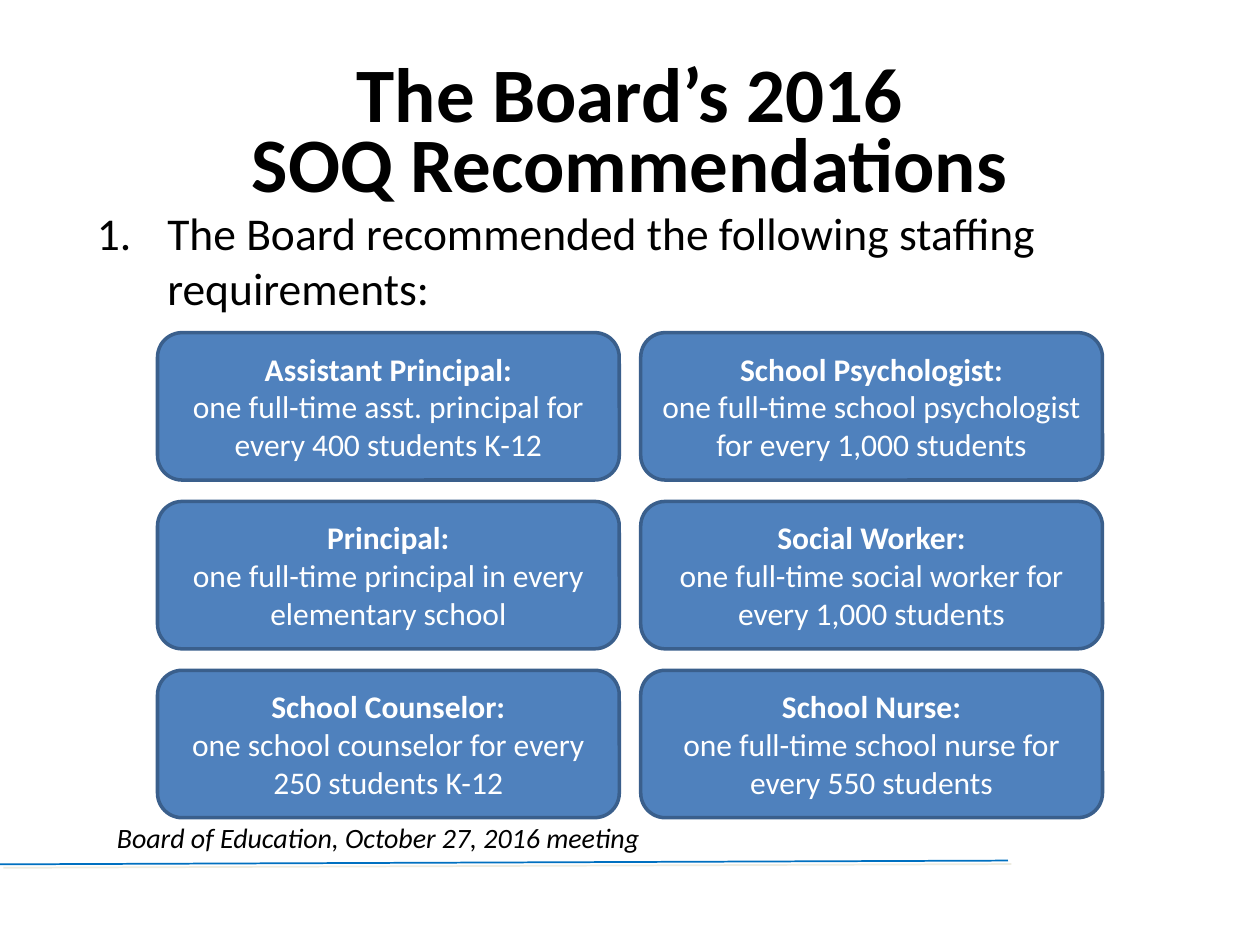
from dataclasses import dataclass

from lxml import etree
from pptx import Presentation
from pptx.dml.color import RGBColor
from pptx.enum import shapes, text
from pptx.oxml import ns
from pptx.util import Inches, Pt


@dataclass(frozen=True)
class Theme:
    font: str = "Calibri"
    ink: str = "000000"
    card_text: str = "FFFFFF"
    card_fill: str = "4F81BD"
    card_line: str = "3A5F8C"
    rule: str = "0070C0"
    rule_shadow: str = "EEECE1"
    title_size: int = 44
    intro_size: int = 26
    card_size: int = 18
    source_size: int = 16


THEME = Theme()

# Each column of cards, from top to bottom
STAFFING = [
    [
        ("Assistant Principal:", "one full-time asst. principal for every 400 students K-12"),
        ("Principal:", "one full-time principal in every elementary school"),
        ("School Counselor:", "one school counselor for every 250 students K-12"),
    ],
    [
        ("School Psychologist:", "one full-time school psychologist for every 1,000 students"),
        ("Social Worker:", "one full-time social worker for every 1,000 students"),
        ("School Nurse:", "one full-time school nurse for every 550 students"),
    ],
]


def color(value):
    return RGBColor.from_string(value)


def write(para, words, size, ink=THEME.ink, bold=False, italic=False, align=None):
    """Add text to a paragraph; a newline becomes a line break."""
    if align is not None:
        para.alignment = align
    for index, line in enumerate(words.split("\n")):
        if index:
            para.add_line_break()
        span = para.add_run()
        span.text = line
        span.font.name = THEME.font
        span.font.size = Pt(size)
        span.font.bold = bold
        span.font.italic = italic
        span.font.color.rgb = color(ink)


def add_text_box(page, left, top, width, height, anchor=text.MSO_ANCHOR.TOP):
    box = page.shapes.add_textbox(Inches(left), Inches(top), Inches(width), Inches(height))
    box.text_frame.word_wrap = True
    box.text_frame.vertical_anchor = anchor
    return box.text_frame.paragraphs[0]


def add_rule(page, left, top, width, height):
    """Slightly rising line with a pale offset shadow."""
    rule = page.shapes.add_connector(
        shapes.MSO_CONNECTOR.STRAIGHT,
        Inches(left + width), Inches(top), Inches(left), Inches(top + height))
    rule.line.color.rgb = color(THEME.rule)
    rule.line.width = Pt(1)
    effects = etree.SubElement(rule._element.spPr, ns.qn("a:effectLst"))
    shadow = etree.SubElement(effects, ns.qn("a:outerShdw"),
                              dist=str(Pt(2.8)), dir=str(45 * 60000))
    etree.SubElement(shadow, ns.qn("a:srgbClr"), val=THEME.rule_shadow)


def add_title(page, left, top, width, height):
    para = add_text_box(page, left, top, width, height, text.MSO_ANCHOR.MIDDLE)
    para.line_spacing = Pt(40)
    write(para, "The Board’s 2016\nSOQ Recommendations", THEME.title_size,
          bold=True, align=text.PP_ALIGN.CENTER)


def add_intro(page, left, top, width, height):
    para = add_text_box(page, left, top, width, height)
    props = para._p.get_or_add_pPr()
    hanging = Inches(0.56)
    props.set("marL", str(hanging))
    props.set("indent", str(-hanging))
    etree.SubElement(props, ns.qn("a:buFont"), typeface="+mj-lt")
    etree.SubElement(props, ns.qn("a:buAutoNum"), type="arabicPeriod")
    write(para, "The Board recommended the following staffing requirements:", THEME.intro_size)


def add_card(page, left, top, width, height, role, ratio):
    card = page.shapes.add_shape(
        shapes.MSO_SHAPE.ROUNDED_RECTANGLE,
        Inches(left), Inches(top), Inches(width), Inches(height))
    card.shadow.inherit = False
    card.fill.solid()
    card.fill.fore_color.rgb = color(THEME.card_fill)
    card.line.color.rgb = color(THEME.card_line)
    card.line.width = Pt(2)
    frame = card.text_frame
    frame.word_wrap = True
    frame.vertical_anchor = text.MSO_ANCHOR.MIDDLE
    style = dict(size=THEME.card_size, ink=THEME.card_text, align=text.PP_ALIGN.CENTER)
    write(frame.paragraphs[0], role, bold=True, **style)
    write(frame.add_paragraph(), ratio, **style)


def add_staffing_grid(page, left, top, width, height, gap=0.17):
    """Fill the box with equal cards, column by column."""
    columns, rows = len(STAFFING), len(STAFFING[0])
    card_width = (width - gap * (columns - 1)) / columns
    card_height = (height - gap * (rows - 1)) / rows
    for column, cards in enumerate(STAFFING):
        for row, (role, ratio) in enumerate(cards):
            add_card(page, left + column * (card_width + gap), top + row * (card_height + gap),
                     card_width, card_height, role, ratio)


def add_source(page, left, top, width, height):
    para = add_text_box(page, left, top, width, height)
    write(para, "Board of Education, October 27, 2016 meeting", THEME.source_size, italic=True)


def main():
    deck = Presentation()
    deck.slide_width, deck.slide_height = Inches(10), Inches(7.5)
    page = deck.slides.add_slide(deck.slide_layouts[6])

    add_rule(page, 0, 6.83, 8, 0.03)
    add_intro(page, 0.67, 1.58, 8.83, 0.98)
    add_staffing_grid(page, 1.25, 2.64, 7.5, 3.85)
    add_title(page, 0, 0.47, 10, 1.25)
    add_source(page, 0.83, 6.46, 8.83, 0.37)

    deck.save("out.pptx")


if __name__ == "__main__":
    main()
